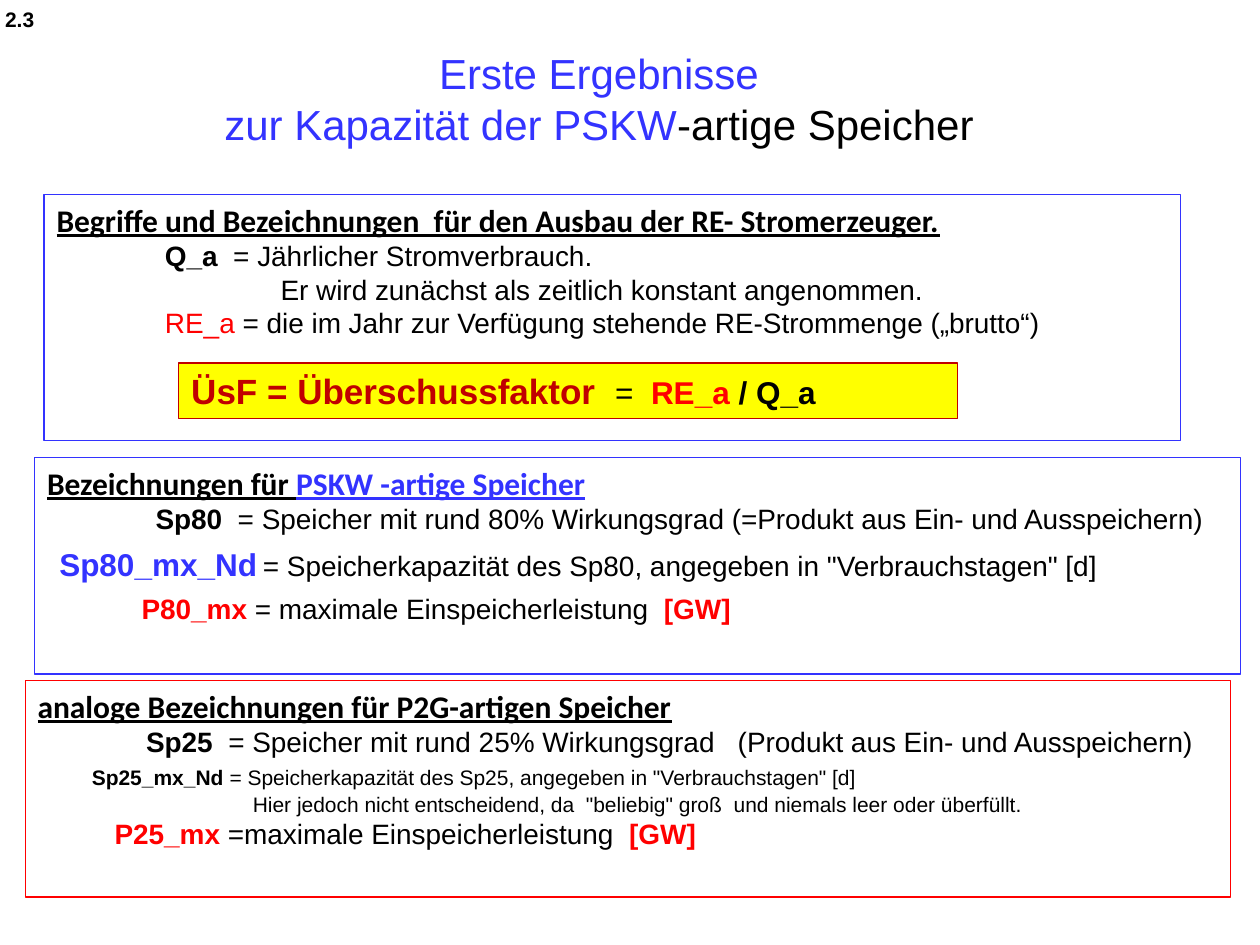
from pptx import Presentation
from pptx.dml.color import RGBColor
from pptx.enum.shapes import MSO_SHAPE
from pptx.enum.text import MSO_ANCHOR, PP_ALIGN
from pptx.util import Pt

BLACK, BLUE, RED, DARK_RED, YELLOW = "000000", "3333FF", "FF0000", "C00000", "FFFF00"

TITLE = [("Erste Ergebnisse ", BLUE), ("\n", BLUE),
         ("zur Kapazität der PSKW", BLUE), ("-artige Speicher ", BLACK)]

# run: text, colour, bold, optional size; line: indent, space before, size, runs
TERMS = [
    (62, 0, 16, [("Q_a", BLACK, True), ("  = Jährlicher Stromverbrauch.", BLACK, False)]),
    (128, 0, 16, [("Er wird zunächst als zeitlich konstant angenommen.", BLACK, False)]),
    (62, 0, 16, [("RE_a", RED, False),
                 (" = die im Jahr zur Verfügung stehende RE-Strommenge („brutto“)", BLACK, False)]),
]
PSKW = [
    (62, 0, 16, [("Sp80", BLACK, True),
                 ("  = Speicher mit rund 80% Wirkungsgrad (=Produkt aus Ein- und Ausspeichern)", BLACK, False)]),
    (7, 5.5, 16, [("Sp80_mx_Nd", BLUE, True, 18), (" ", BLACK, False, 12),
                  ("= Speicherkapazität des Sp80, angegeben in \"Verbrauchstagen\" [d]", BLACK, False)]),
    (54, 5, 16, [("P80_mx", RED, True), (" = maximale Einspeicherleistung  ", BLACK, False),
                 ("[GW]", RED, True)]),
]
P2G = [
    (62, 0, 16, [("Sp25", BLACK, True),
                 ("  = Speicher mit rund 25% Wirkungsgrad   (Produkt aus Ein- und Ausspeichern)", BLACK, False)]),
    (31, 3.5, 12, [("Sp25_mx_Nd", BLACK, True),
                   (" = Speicherkapazität des Sp25, angegeben in \"Verbrauchstagen\" [d]", BLACK, False)]),
    (123, 1, 12, [("Hier jedoch nicht entscheidend, da  \"beliebig\" groß  und niemals leer oder überfüllt.",
                   BLACK, False)]),
    (44, 0, 16, [("P25_mx", RED, True), (" =maximale Einspeicherleistung  ", BLACK, False),
                 ("[GW]", RED, True)]),
]
BOXES = [
    ((14.4, 388.8, 689, 123.8), RED,
     [("analoge Bezeichnungen für P2G-artigen Speicher", BLACK)], P2G),
    ((25.2, 111.2, 649.4, 140.4), BLUE,
     [("Begriffe und Bezeichnungen  für den Ausbau der RE- Stromerzeuger.", BLACK)], TERMS),
    ((19.8, 261.4, 689, 123.8), BLUE,
     [("Bezeichnungen für ", BLACK), ("PSKW -artige Speicher", BLUE)], PSKW),
]
FORMULA = [("ÜsF = Überschussfaktor  ", DARK_RED, True, 20), ("=  ", BLACK, False),
           ("RE_a ", RED, True), ("/ Q_a", BLACK, True)]


def rgb(color):
    return RGBColor.from_string(color)


def add_run(p, text, color, bold=None, size=None):
    r = p.add_run()
    r.text = text
    r.font.color.rgb = rgb(color)
    r.font.bold = bold
    if size:
        r.font.size = Pt(size)


def format_paragraph(p, size, font="Arial", indent=0, before=0):
    p.font.name, p.font.size = font, Pt(size)
    p.alignment = PP_ALIGN.LEFT
    p.space_before = Pt(before)
    p._p.get_or_add_pPr().set("marL", str(Pt(indent)))


def add_box(s, frame, line, fill=None):
    box = s.shapes.add_shape(MSO_SHAPE.RECTANGLE, *map(Pt, frame))
    box.shadow.inherit = False
    box.line.color.rgb = rgb(line)
    box.line.width = Pt(0.75)
    if fill:
        box.fill.solid()
        box.fill.fore_color.rgb = rgb(fill)
    else:
        box.fill.background()
    tf = box.text_frame
    tf.word_wrap = True
    tf.vertical_anchor = MSO_ANCHOR.TOP
    return tf


def add_definitions(s, frame, line, heading, lines):
    tf = add_box(s, frame, line)
    p = tf.paragraphs[0]
    format_paragraph(p, 18, "Calibri")
    p.font.bold = p.font.underline = True
    for text, color in heading:
        add_run(p, text, color, True)
    for r in p.runs:
        r.font.underline = True
    for indent, before, size, runs in lines:
        p = tf.add_paragraph()
        format_paragraph(p, size, indent=indent, before=before)
        for run in runs:
            add_run(p, *run)


def add_title(s):
    title = s.shapes.title
    title.left, title.top, title.width, title.height = map(Pt, (39.6, 15.1, 612, 82.1))
    tf = title.text_frame
    tf.word_wrap = True
    tf.vertical_anchor = MSO_ANCHOR.MIDDLE
    p = tf.paragraphs[0]
    format_paragraph(p, 24)
    p.alignment = PP_ALIGN.CENTER
    for text, color in TITLE:
        if text == "\n":
            p.add_line_break()
        else:
            add_run(p, text, color)


def add_number(s):
    tf = s.shapes.add_textbox(*map(Pt, (2.9, 3.6, 25.2, 14.4))).text_frame
    tf.margin_left = tf.margin_top = tf.margin_right = tf.margin_bottom = 0
    p = tf.paragraphs[0]
    format_paragraph(p, 12)
    add_run(p, "2.3", BLACK, True)


def main():
    prs = Presentation()
    prs.slide_width, prs.slide_height = Pt(720), Pt(540)
    s = prs.slides.add_slide(prs.slide_layouts[5])
    add_title(s)
    for box in BOXES:
        add_definitions(s, *box)
    p = add_box(s, (102.2, 207.4, 445, 31.7), DARK_RED, YELLOW).paragraphs[0]
    format_paragraph(p, 18)
    for run in FORMULA:
        add_run(p, *run)
    add_number(s)
    prs.save("out.pptx")


if __name__ == "__main__":
    main()
